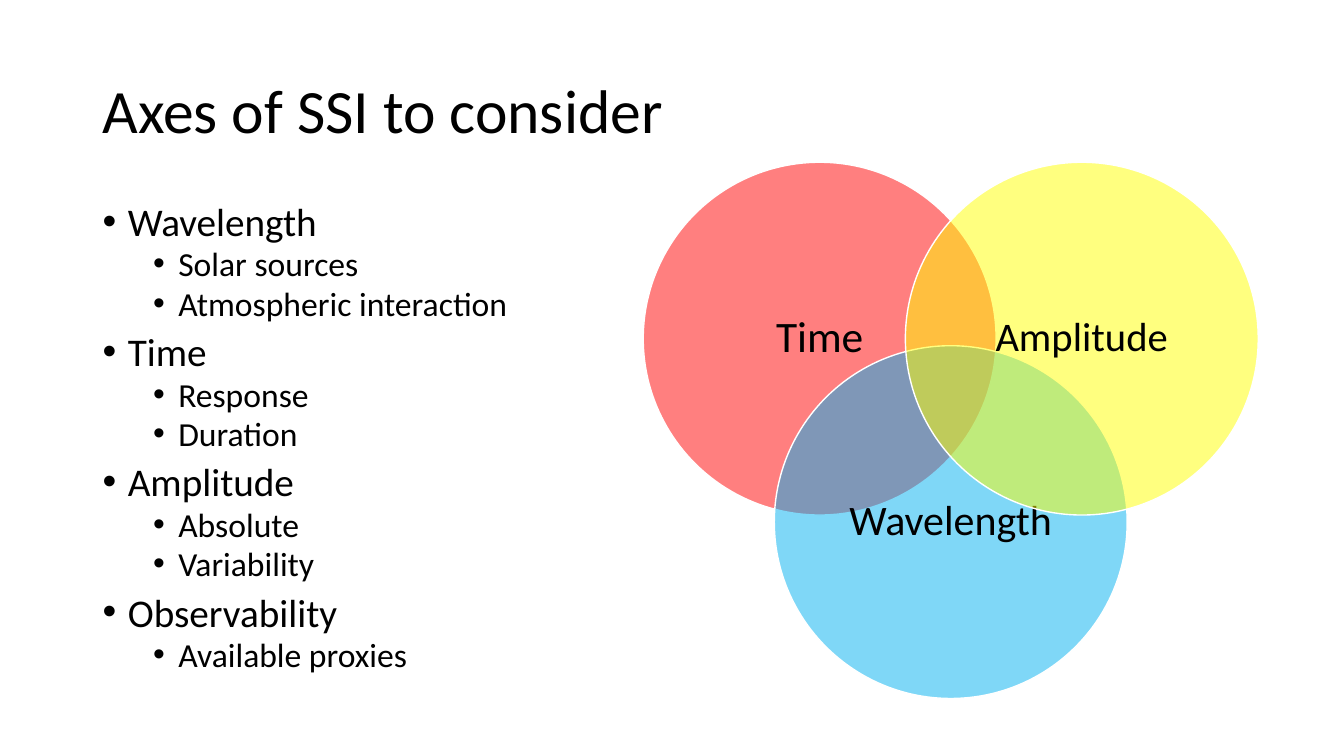
import math
from lxml import etree
from pptx import Presentation
from pptx.dml.color import RGBColor
from pptx.enum import shapes, text
from pptx.oxml import ns
from pptx.util import Inches, Pt

BLACK = RGBColor(0x00, 0x00, 0x00)
WHITE = RGBColor(0xFF, 0xFF, 0xFF)
RED = RGBColor(0xFF, 0x00, 0x00)
BLUE = RGBColor(0x00, 0xB0, 0xF0)
YELLOW = RGBColor(0xFF, 0xFF, 0x00)
FONT = "Calibri"

TITLE = "Axes of SSI to consider"
TOPICS = [
    ("Wavelength", ["Solar sources", "Atmospheric interaction"]),
    ("Time", ["Response", "Duration"]),
    ("Amplitude", ["Absolute", "Variability"]),
    ("Observability", ["Available proxies"]),
]
AXES = [
    ("Time", RED, 31, 0, 0),
    ("Wavelength", BLUE, 30, 1, 1),
    ("Amplitude", YELLOW, 29, 2, 0),
]
LEVELS = [
    {"size": 28, "indent": 0.25, "before": 10},
    {"size": 24, "indent": 0.75, "before": 5},
]

VENN_LEFT, VENN_TOP = 6.38, 1.61
DIAMETER = 3.5
STEP_X, STEP_Y = 1.3, 1.82
LABEL_SIDE = DIAMETER / math.sqrt(2)
LABEL_INSET = (DIAMETER - LABEL_SIDE) / 2


def add_bullet(paragraph, indent):
    properties = paragraph._p.get_or_add_pPr()
    properties.set("marL", str(Inches(indent)))
    properties.set("indent", str(Inches(-0.25)))
    etree.SubElement(properties, ns.qn("a:buFont"), typeface="Arial")
    etree.SubElement(properties, ns.qn("a:buChar"), char="•")


def add_text(slide, lines, left, top, width, height, size=28, spacing=0.9,
             anchor=text.MSO_ANCHOR.MIDDLE, align=text.PP_ALIGN.LEFT,
             inset=None, bulleted=False):
    frame = slide.shapes.add_textbox(
        Inches(left), Inches(top), Inches(width), Inches(height)).text_frame
    frame.word_wrap = True
    frame.vertical_anchor = anchor
    if inset is not None:
        frame.margin_left = frame.margin_right = Inches(inset)
        frame.margin_top = frame.margin_bottom = Inches(inset)
    for number, (wording, level) in enumerate(lines):
        paragraph = frame.add_paragraph() if number else frame.paragraphs[0]
        paragraph.text = wording
        paragraph.level = level
        if bulleted:
            add_bullet(paragraph, LEVELS[level]["indent"])
            if number:
                paragraph.space_before = Pt(LEVELS[level]["before"])
        paragraph.alignment = align
        paragraph.line_spacing = spacing
        font = paragraph.runs[0].font
        font.name = FONT
        font.size = Pt(LEVELS[level]["size"] if bulleted else size)
        font.color.rgb = BLACK


def add_circle(slide, left, top, color):
    circle = slide.shapes.add_shape(
        shapes.MSO_SHAPE.OVAL, Inches(left), Inches(top),
        Inches(DIAMETER), Inches(DIAMETER))
    circle.shadow.inherit = False
    circle.fill.solid()
    circle.fill.fore_color.rgb = color
    shade = circle._element.spPr.find(ns.qn("a:solidFill"))[0]
    etree.SubElement(shade, ns.qn("a:alpha"), val="50000")
    circle.line.color.rgb = WHITE
    circle.line.width = Pt(1)


def main():
    deck = Presentation()
    deck.slide_width, deck.slide_height = Inches(13.33), Inches(7.5)
    slide = deck.slides.add_slide(deck.slide_layouts[6])

    add_text(slide, [(TITLE, 0)], 0.92, 0.4, 11.5, 1.45, size=44)

    outline = []
    for topic, details in TOPICS:
        outline.append((topic, 0))
        outline.extend((detail, 1) for detail in details)
    add_text(slide, outline, 0.92, 2, 11.5, 4.76, spacing=0.8,
             anchor=text.MSO_ANCHOR.TOP, bulleted=True)

    for axis, color, size, column, row in AXES:
        left = VENN_LEFT + column * STEP_X
        top = VENN_TOP + row * STEP_Y
        add_circle(slide, left, top, color)
        add_text(slide, [(axis, 0)], left + LABEL_INSET, top + LABEL_INSET,
                 LABEL_SIDE, LABEL_SIDE, size=size, inset=0.12,
                 align=text.PP_ALIGN.CENTER)

    deck.save("out.pptx")


if __name__ == "__main__":
    main()
